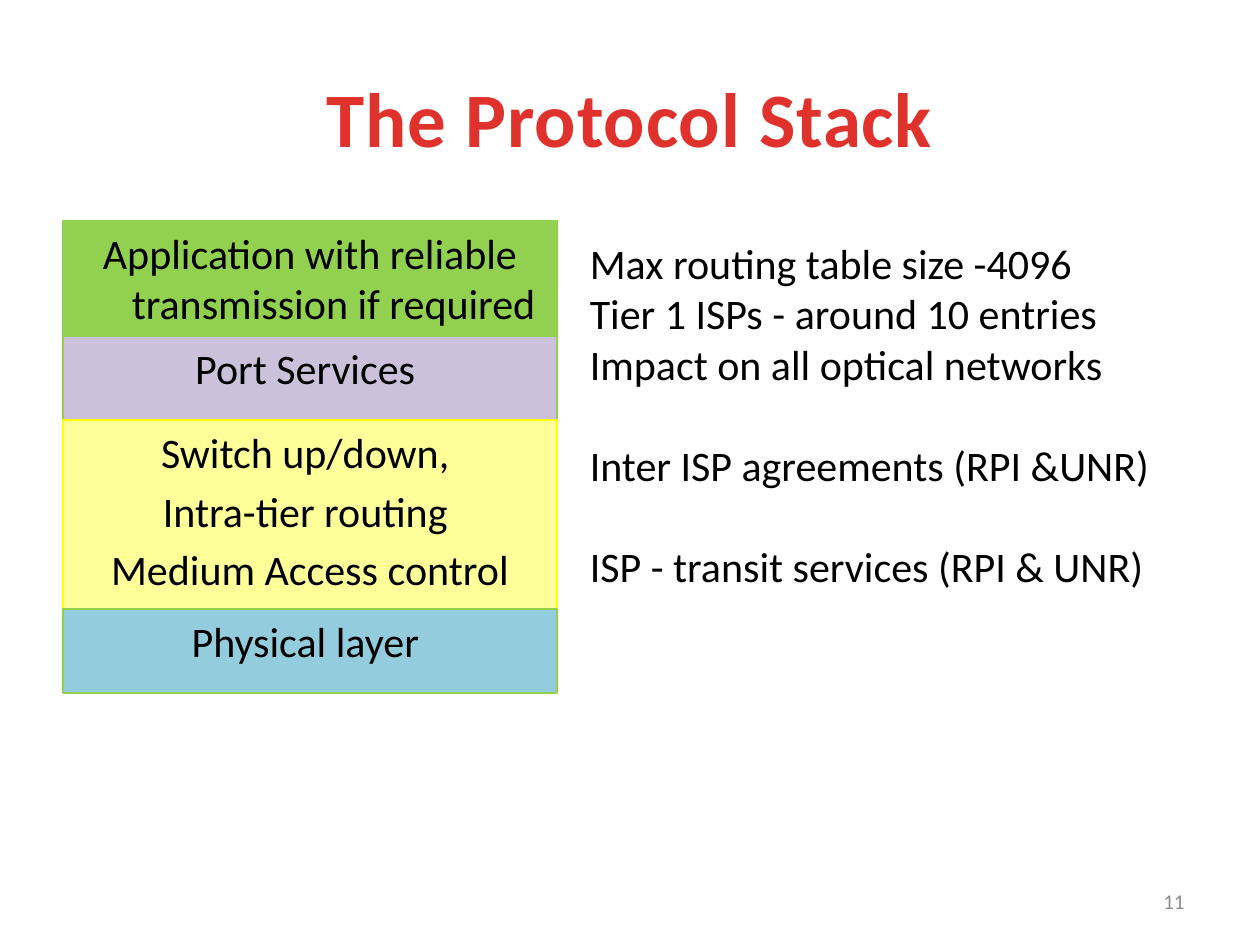
"""Build the protocol stack slide."""
from dataclasses import dataclass
from typing import Optional

from lxml.etree import SubElement
from pptx import Presentation
from pptx.dml.color import RGBColor
from pptx.enum.shapes import MSO_SHAPE as Form
from pptx.enum.text import MSO_ANCHOR as Anchor, MSO_AUTO_SIZE as Fit, PP_ALIGN as Align
from pptx.oxml.ns import qn
from pptx.util import Cm, Pt

RED = RGBColor(0xE0, 0x32, 0x2D)
GREEN = RGBColor(0x92, 0xD0, 0x50)
LILAC = RGBColor(0xCC, 0xC1, 0xDA)
CREAM = RGBColor(0xFF, 0xFF, 0x99)
YELLOW = RGBColor(0xFF, 0xFF, 0x00)
BLUE = RGBColor(0x93, 0xCD, 0xDD)
BLACK = RGBColor(0, 0, 0)
GREY = RGBColor(0x8C, 0x8C, 0x8C)
LEFT, TOP, WIDTH = 1.27, 4.45, 9.96


@dataclass
class Layer:
    text: str
    high: float
    fill: RGBColor
    edge: RGBColor = GREEN


LAYERS = [
    Layer("Application with reliable transmission if required", 2.33, GREEN),
    Layer("Port Services ", 1.69, LILAC),
    Layer("Switch up/down, \nIntra-tier routing \nMedium Access control", 3.81, CREAM, YELLOW),
    Layer("Physical layer ", 1.69, BLUE),
]
NOTES = [
    "Max routing table size -4096\nTier 1 ISPs - around 10 entries\nImpact on all optical networks",
    "Inter ISP agreements (RPI &UNR)",
    "ISP - transit services (RPI & UNR)",
]


def place(shape, left: float, top: float, width: float, high: float) -> None:
    """Move and size a shape, in centimetres."""
    shape.left, shape.top = Cm(left), Cm(top)
    shape.width, shape.height = Cm(width), Cm(high)


def write(shape, text: str, *, size: float = 24, color: RGBColor = BLACK,
          bold: bool = False, align: Align = Align.LEFT, anchor: Anchor = Anchor.TOP,
          before: float = 0, hang: float = 0, track: Optional[int] = None) -> None:
    """Fill a shape with formatted paragraphs, one per line of text."""
    frame = shape.text_frame
    frame.word_wrap, frame.auto_size = True, Fit.NONE
    frame.vertical_anchor = anchor
    frame.text = text
    for para in frame.paragraphs:
        para.alignment, para.space_before = align, Pt(before)
        if hang:
            props = para._p.get_or_add_pPr()
            props.set("marL", str(Cm(hang)))
            props.set("indent", str(-Cm(hang)))
            SubElement(props, qn("a:buNone"))
        for run in para.runs:
            font = run.font
            font.name, font.size, font.bold = "Calibri", Pt(size), bold
            font.color.rgb = color
            if track:
                run._r.get_or_add_rPr().set("spc", str(track))


def stack(slide, layers: list[Layer]) -> None:
    """Draw the layers downwards, the first in the body placeholder."""
    top = TOP
    for spot, layer in enumerate(layers):
        if spot == 0:
            shape = slide.placeholders[1]
        else:
            shape = slide.shapes.add_shape(Form.RECTANGLE, 0, 0, 0, 0)
            shape.shadow.inherit = False
        place(shape, LEFT, top, WIDTH, layer.high)
        shape.fill.solid()
        shape.fill.fore_color.rgb = layer.fill
        shape.line.color.rgb = layer.edge
        shape.line.width = Pt(0.75)
        write(shape, layer.text, align=Align.CENTER, before=4.8, hang=0.95)
        top += layer.high


def main() -> None:
    """Make the slide and save it."""
    deck = Presentation()
    deck.slide_width, deck.slide_height = Cm(25.4), Cm(19.05)
    slide = deck.slides.add_slide(deck.slide_layouts[1])
    title = slide.shapes.title
    place(title, LEFT, 0.76, 22.86, 3.18)
    write(title, "The Protocol Stack", size=44, color=RED, bold=True,
          align=Align.CENTER, anchor=Anchor.MIDDLE, track=50)
    stack(slide, LAYERS)
    notes = slide.shapes.add_textbox(Cm(11.64), Cm(4.66), Cm(12.7), Cm(7.44))
    write(notes, "\n".join(NOTES))
    for para in notes.text_frame.paragraphs:
        if para.text in NOTES[1:]:
            para.space_before = Pt(29)
    page = slide.shapes.add_textbox(Cm(18.2), Cm(17.66), Cm(5.93), Cm(1.01))
    write(page, "11", size=12, color=GREY, align=Align.RIGHT, anchor=Anchor.MIDDLE)
    deck.save("out.pptx")


if __name__ == "__main__":
    main()
